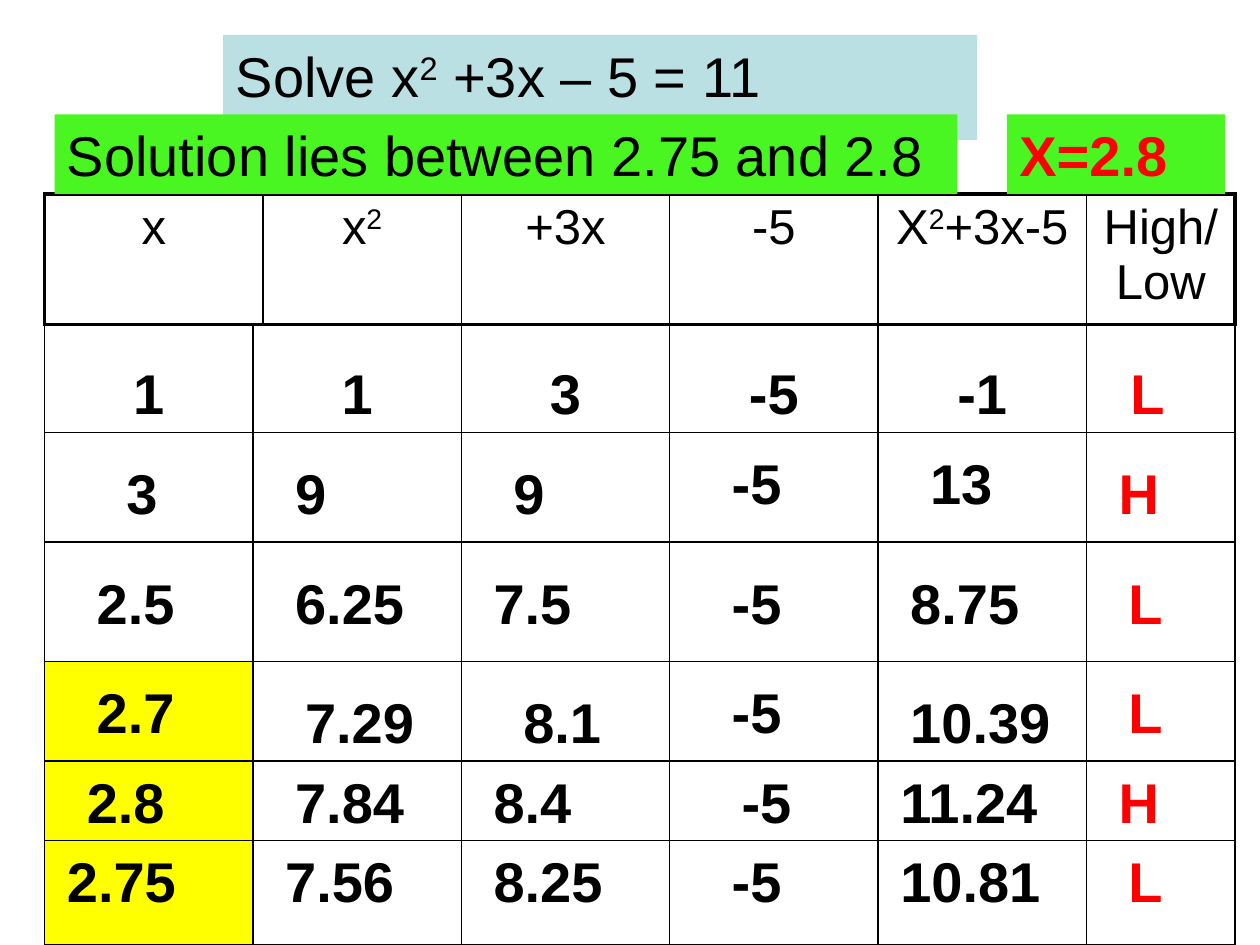
from pptx import Presentation
from pptx.dml.color import RGBColor
from pptx.enum.shapes import MSO_SHAPE
from pptx.enum.text import MSO_ANCHOR, MSO_AUTO_SIZE, PP_ALIGN
from pptx.oxml import parse_xml
from pptx.oxml.ns import nsdecls
from pptx.util import Inches, Pt

RECTANGLE = MSO_SHAPE.RECTANGLE
TOP, BOTTOM = MSO_ANCHOR.TOP, MSO_ANCHOR.BOTTOM
LEFT, CENTER = PP_ALIGN.LEFT, PP_ALIGN.CENTER
GROW = MSO_AUTO_SIZE.SHAPE_TO_FIT_TEXT

COLORS = {"ink": "000000", "verdict": "FF0000", "question": "BBE0E3",
          "answer": "4AF622", "bracket": "FFFF00"}
GRID_COLUMNS, GRID_ROWS = 127, 95
LINE_HEIGHT = 8
TABLE_LEFT = 4
HEADER_WIDTHS = [22, 20, 21, 21, 21, 15]
TRIAL_WIDTHS = [21] * 5 + [15]
THIN, THICK = 1, 2.25


class TrialSlide:
    def __init__(self, deck):
        self.font = "Arial"
        self.size = 32
        self.unit_x = deck.slide_width / GRID_COLUMNS
        self.unit_y = deck.slide_height / GRID_ROWS
        self.slide = deck.slides.add_slide(deck.slide_layouts[5])

    def box(self, column, row, width, height):
        return (int((column + 0.5) * self.unit_x), int((row + 0.5) * self.unit_y),
                int(width * self.unit_x), int(height * self.unit_y))

    def rgb(self, name):
        return RGBColor.from_string(COLORS[name])

    def set_text(self, frame, text, color="ink", bold=False, align=LEFT, size=None):
        paragraph = frame.paragraphs[0]
        before, square, after = text.partition("²")
        paragraph.text = before
        if square:
            paragraph.add_run().text = "2"
            paragraph.runs[-1].font._element.set("baseline", "30000")
            if after:
                paragraph.add_run().text = after
        paragraph.alignment = align
        for run in paragraph.runs:
            run.font.name = self.font
            run.font.size = Pt(size or self.size)
            run.font.bold = bold
            run.font.color.rgb = self.rgb(color)

    def line(self, shape, text, color="ink", bold=False):
        frame = shape.text_frame
        frame.word_wrap = True
        frame.auto_size = GROW
        frame.vertical_anchor = TOP
        self.set_text(frame, text, color, bold)

    def title(self, place, text, fill):
        heading = self.slide.shapes.title
        heading.left, heading.top, heading.width, heading.height = self.box(*place)
        heading.fill.solid()
        heading.fill.fore_color.rgb = self.rgb(fill)
        self.line(heading, text)

    def banner(self, place, text, fill, color="ink", bold=False):
        panel = self.slide.shapes.add_shape(RECTANGLE, *self.box(*place))
        panel.shadow.inherit = False
        panel.fill.solid()
        panel.fill.fore_color.rgb = self.rgb(fill)
        panel.line.fill.background()
        self.line(panel, text, color, bold)

    def value(self, place, text):
        note = self.slide.shapes.add_textbox(*self.box(*place))
        self.line(note, text, "verdict" if text in "HL" else "ink", True)

    def border(self, cell, widths):
        properties = cell._tc.get_or_add_tcPr()
        for position, (side, points) in enumerate(zip("LRTB", widths)):
            properties.insert(position, parse_xml(
                f'<a:ln{side} {nsdecls("a")} w="{Pt(points)}"><a:solidFill>'
                f'<a:srgbClr val="{COLORS["ink"]}"/></a:solidFill></a:ln{side}>'))

    def table(self, row, heights, widths, framed=False, first_fill=None):
        place = self.box(TABLE_LEFT, row, sum(widths), sum(heights))
        grid = self.slide.shapes.add_table(len(heights), len(widths), *place).table
        grid.first_row = grid.horz_banding = False
        edge = THICK if framed else THIN
        last = len(widths) - 1
        for column, width in zip(grid.columns, widths):
            column.width = int(width * self.unit_x)
        for line, height in zip(grid.rows, heights):
            line.height = int(height * self.unit_y)
            for index, cell in enumerate(line.cells):
                if first_fill and index == 0:
                    cell.fill.solid()
                    cell.fill.fore_color.rgb = self.rgb(first_fill)
                else:
                    cell.fill.background()
                self.border(cell, (edge if index == 0 else THIN,
                                   edge if index == last else THIN, edge, edge))
        return grid


HEADINGS = ["x", "x²", "+3x", "-5", "X²+3x-5", "High/Low"]
FIRST_TRIAL = ["1", "1", "3", "-5", "-1", "L"]
SECOND_TRIAL = [("3", 11, 45, 12), ("9", 28, 45, 12), ("9", 50, 45, 12),
                ("-5", 72, 44, 12), ("13", 92, 44, 12), ("H", 111, 45, 12)]
LATER_TRIALS = [
    (54, 12, None, [("2.5", 8, 56, 15), ("6.25", 28, 56, 15), ("7.5", 48, 56, 15),
                    ("-5", 72, 56, 15), ("8.75", 90, 56, 15), ("L", 112, 56, 9)]),
    (66, 10, "bracket", [("2.7", 8, 67, 11), ("7.29", 29, 68, 15), ("8.1", 51, 68, 11),
                         ("-5", 72, 67, 11), ("10.39", 90, 68, 17), ("L", 112, 67, 11)]),
    (76, 8, "bracket", [("2.8", 7, 76, 14), ("7.84", 28, 76, 14), ("8.4", 48, 76, 14),
                        ("-5", 73, 76, 14), ("11.24", 89, 76, 18), ("H", 111, 76, 8)]),
    (84, 10.5, "bracket", [("2.75", 5, 84, 15), ("7.56", 27, 84, 15), ("8.25", 48, 84, 15),
                           ("-5", 72, 84, 11), ("10.81", 89, 84, 17), ("L", 112, 84, 9)]),
]


def main():
    deck = Presentation()
    deck.slide_width, deck.slide_height = Inches(10), Inches(7.5)
    page = TrialSlide(deck)
    page.title((22, 3, 76, LINE_HEIGHT), "Solve x² +3x – 5 = 11", "question")

    header = page.table(19, [13], HEADER_WIDTHS, framed=True)
    for cell, heading in zip(header.rows[0].cells, HEADINGS):
        page.set_text(cell.text_frame, heading, align=CENTER, size=28)

    opening = page.table(32, [11, 11], TRIAL_WIDTHS)
    for cell, number in zip(opening.rows[0].cells, FIRST_TRIAL):
        cell.vertical_anchor = BOTTOM
        if number == "L":
            cell.margin_left = Inches(0.35)
            page.set_text(cell.text_frame, number, "verdict", True)
        else:
            page.set_text(cell.text_frame, number, bold=True, align=CENTER)
    for number, column, row, width in SECOND_TRIAL:
        page.value((column, row, width, LINE_HEIGHT), number)

    for top, height, fill, numbers in LATER_TRIALS:
        page.table(top, [height], TRIAL_WIDTHS, first_fill=fill)
        for number, column, row, width in numbers:
            page.value((column, row, width, LINE_HEIGHT), number)

    page.banner((5, 11, 91, LINE_HEIGHT), "Solution lies between 2.75 and 2.8", "answer")
    page.banner((101, 11, 22, LINE_HEIGHT), "X=2.8", "answer", "verdict", True)
    deck.save("out.pptx")


if __name__ == "__main__":
    main()
